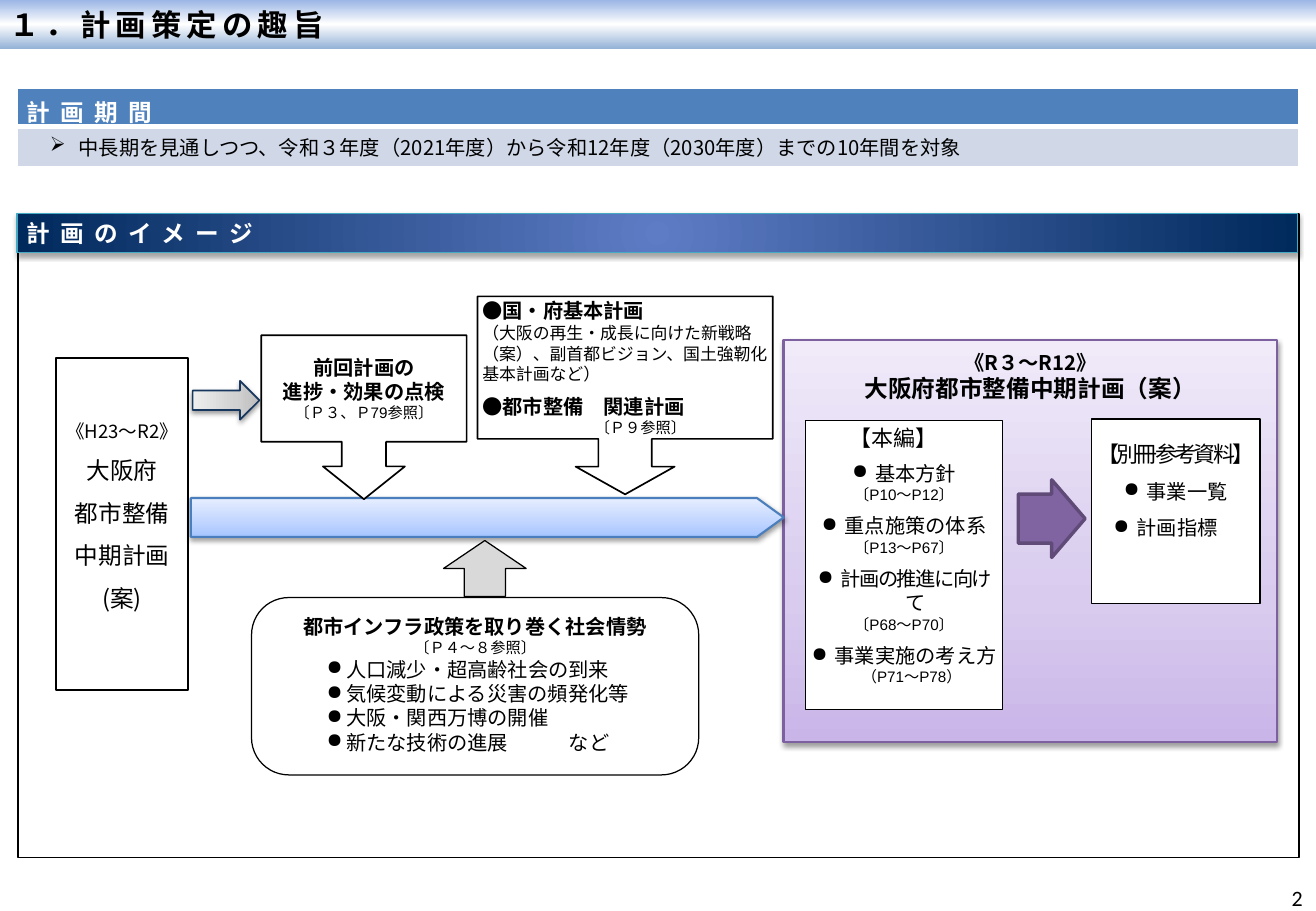
"""Builds the slide on the purpose and period of the urban development plan."""
from pptx import Presentation
from pptx.dml.color import RGBColor
from pptx.enum.shapes import MSO_SHAPE as SHAPE
from pptx.enum.text import MSO_ANCHOR as ANCHOR, PP_ALIGN as ALIGN
from pptx.oxml import parse_xml
from pptx.oxml.ns import nsdecls, qn
from pptx.util import Inches, Pt

GRID = Inches(0.1)
NOTO, ARIAL, CALIBRI = "Noto Sans CJK JP", "Arial", "Calibri"
BLACK, WHITE = RGBColor(0, 0, 0), RGBColor(255, 255, 255)
NAVY, BLUE, TEAL = RGBColor(0x17, 0x37, 0x5E), RGBColor(0x4B, 0x7E, 0xBC), RGBColor(0x46, 0xAA, 0xC5)
PURPLE, VIOLET, DARK_VIOLET = RGBColor(0x7D, 0x60, 0xA0), RGBColor(0x80, 0x64, 0xA2), RGBColor(0x5F, 0x4A, 0x78)
GREY, HEADER_BLUE, PALE_BLUE = RGBColor(0xD9, 0xD9, 0xD9), RGBColor(0x4F, 0x81, 0xBD), RGBColor(0xD0, 0xD8, 0xE8)
UPWARD, DOWNWARD = '<a:lin ang="16200000" scaled="0"/>', '<a:lin ang="5400000" scaled="0"/>'
RADIAL = '<a:path path="circle"><a:fillToRect l="50000" t="50000" r="50000" b="50000"/></a:path>'

deck = Presentation()
deck.slide_width, deck.slide_height = Inches(10.83), Inches(7.5)
slide = deck.slides.add_slide(deck.slide_layouts[6])


def draw(preset, at, fill=None, line=None, weight=1, adjust=(), turn=0, shadow=0):
    """Adds a shape at grid units; fill is a colour or (direction, stops)."""
    shape = slide.shapes.add_shape(preset, *(round(n * GRID) for n in at))
    shape.rotation = turn
    for index, value in enumerate(adjust):
        shape.adjustments[index] = value
    if fill is None:
        shape.fill.background()
    elif isinstance(fill, RGBColor):
        shape.fill.solid()
        shape.fill.fore_color.rgb = fill
    else:
        direction, stops = fill
        marks = "".join(f'<a:gs pos="{place * 1000}"><a:srgbClr val="{colour}"/></a:gs>' for place, colour in stops)
        shape.fill.gradient()
        plain = shape._element.spPr.find(qn("a:gradFill"))
        plain.getparent().replace(plain, parse_xml(
            f'<a:gradFill {nsdecls("a")} rotWithShape="1"><a:gsLst>{marks}</a:gsLst>{direction}</a:gradFill>'))
    if line is None:
        shape.line.fill.background()
    else:
        shape.line.color.rgb, shape.line.width = line, Pt(weight)
    shape.shadow.inherit = False
    if shadow:
        shape._element.spPr.find(qn("a:effectLst")).append(parse_xml(
            f'<a:outerShdw {nsdecls("a")} blurRad="{Pt(3.1)}" dist="{Pt(1.7)}" dir="5400000" rotWithShape="0">'
            f'<a:srgbClr val="000000"><a:alpha val="{shadow * 1000}"/></a:srgbClr></a:outerShdw>'))
    return shape


def write(frame, items, inset=(0.04, 0.04, 0.04, 0.04), anchor=ANCHOR.MIDDLE, align=ALIGN.CENTER, color=BLACK, leading=None):
    """Fills a text frame with (text or runs, size, options) items."""
    frame.word_wrap, frame.vertical_anchor = True, anchor
    frame.margin_left, frame.margin_top, frame.margin_right, frame.margin_bottom = map(Inches, inset)
    for index, (runs, size, extra) in enumerate(items):
        para = frame.add_paragraph() if index else frame.paragraphs[0]
        for text, changes in [(runs, {})] if isinstance(runs, str) else runs:
            run = para.add_run()
            run.text = text
            for key, value in changes.items():
                run._r.get_or_add_rPr().set(key, value)
        para.alignment = align if "align" not in extra else extra["align"]
        if leading:
            para.line_spacing = leading
        para.space_before, para.space_after = Pt(extra.get("before", 0)), Pt(extra.get("after", 0))
        font = para.font
        font.size, font.bold, font.name = Pt(size), extra.get("bold", False), extra.get("font", NOTO)
        font.color.rgb = color
        props = para._p.get_or_add_pPr()
        defaults = props.find(qn("a:defRPr"))
        defaults.set("spc", str(round(extra.get("spacing", 0) * 100)))
        defaults.find(qn("a:latin")).addnext(parse_xml(f'<a:ea {nsdecls("a")} typeface="{NOTO}"/>'))
        left, hang = extra.get("indent", (0, 0))
        props.set("marL", str(Inches(left)))
        props.set("indent", str(Inches(hang)))
        if "bullet" in extra:
            defaults.addprevious(parse_xml(f'<a:buChar {nsdecls("a")} char="{extra["bullet"]}"/>'))


BOLD, SMALL = dict(bold=True), dict(font=ARIAL)
POINT = dict(bullet="●", indent=(0.19, -0.19))
TREND = dict(bullet="●", indent=(0.59, -0.16), font=CALIBRI, align=ALIGN.LEFT)
BAND = dict(bold=True, spacing=6)
BAR_INSET = (0.08, 0.04, 0.08, 0.04)

title = draw(SHAPE.RECTANGLE, (0, 0, 108.3, 4), (DOWNWARD, [(0, "9AB5E4"), (50, "FFFFFF"), (100, "95B3D7")]))
write(title.text_frame, [("１．計画策定の趣旨", 18, dict(bold=True, spacing=3))], BAR_INSET, align=ALIGN.LEFT)
draw(SHAPE.RECTANGLE, (1.5, 17.6, 105.4, 53), line=BLACK)
page = slide.shapes.add_textbox(*(round(n * GRID) for n in (82.9, 71.9, 25.3, 4)))
write(page.text_frame, [("2", 13, dict(font=CALIBRI))], (0.1, 0.05, 0.1, 0.05), align=ALIGN.RIGHT)

new_plan = draw(SHAPE.RECTANGLE, (64.5, 28, 40.6, 33.1), (UPWARD, [(0, "C9B5E8"), (35, "D8CBEE"), (100, "F0EAF9")]),
                PURPLE, 1.5, shadow=38)
write(new_plan.text_frame, [("《R３～R12》", 12, BOLD), ("大阪府都市整備中期計画（案）", 14, BOLD)],
      (0.08, 0.08, 0.08, 0.08), ANCHOR.TOP)

old_plan = draw(SHAPE.RECTANGLE, (4.6, 29.5, 10.9, 27.3), WHITE, BLACK, 1.25)
old_lines = ["大阪府", "都市整備", "中期計画", "(案)"]
write(old_plan.text_frame, [("《H23～R2》", 11, {})] + [(text, 14, {}) for text in old_lines],
      (0.06, 0.01, 0.06, 0.24), leading=1.5)

draw(SHAPE.DOWN_ARROW, (17, 30.2, 3.2, 5.5), (UPWARD, [(0, "BDBDBD"), (35, "D1D1D1"), (100, "EEEEEE")]),
     NAVY, turn=270, shadow=38)
draw(SHAPE.PENTAGON, (15.7, 41, 48.8, 3.2), (UPWARD, [(0, "A4C4FF"), (35, "BFD4FF"), (100, "E6EEFF")]),
     BLUE, 1.25, [0.69], shadow=38)

main_part = draw(SHAPE.RECTANGLE, (66.3, 34.6, 16.2, 23.8), WHITE, BLACK, 0.75)
write(main_part.text_frame, [
    ("【本編】　", 13, {}),
    ("基本方針", 12, dict(POINT, before=6)),
    ("〔P10～P12〕", 9, SMALL),
    ("重点施策の体系", 12, dict(POINT, before=6)),
    ("〔P13～P67〕", 9, dict(SMALL, after=6)),
    ("計画の推進に向けて", 12, dict(POINT, spacing=-0.9)),
    ("〔P68～P70〕", 9, dict(SMALL, after=6)),
    ("事業実施の考え方", 12, POINT),
    ("　（P71～P78）", 9, SMALL),
], (0.04, 0.04, 0.04, 0.2))

appendix = draw(SHAPE.RECTANGLE, (89.8, 34.5, 13.9, 15.2), WHITE, BLACK, 0.75)
write(appendix.text_frame, [("【別冊参考資料】", 13, dict(spacing=-1.5)), ("事業一覧", 12, POINT), ("計画指標　", 12, POINT)],
      (0.04, 0.04, 0.04, 0.5), leading=1.5)
draw(SHAPE.RIGHT_ARROW, (83.8, 39.5, 5.5, 6.4), VIOLET, DARK_VIOLET, 2, [0.63, 0.5])

review = draw(SHAPE.DOWN_ARROW_CALLOUT, (21.5, 27.6, 16.9, 13.5), WHITE, BLACK, adjust=[0.27, 0.25, 0.2, 0.65])
write(review.text_frame, [("前回計画の", 12, BOLD), ("進捗・効果の点検", 12, BOLD), ("〔Ｐ３、Ｐ79参照〕", 9, SMALL)])

related = draw(SHAPE.DOWN_ARROW_CALLOUT, (39.3, 24.4, 24.3, 16.3), WHITE, BLACK, adjust=[0.27, 0.25, 0.14, 0.72])
write(related.text_frame, [
    ([("●", {"b": "0"}), ("国・府基本計画", {})], 12, BOLD),
    ("（大阪の再生・成長に向けた新戦略（案）、副首都ビジョン、国土強靭化基本計画など）", 10, dict(font=CALIBRI)),
    ([("●", {"b": "0"}), ("都市整備　関連計画", {})], 12, dict(BOLD, before=6)),
    ("〔Ｐ９参照〕", 9, dict(SMALL, align=ALIGN.CENTER, indent=(0.25, 0))),
], align=ALIGN.LEFT)

society = draw(SHAPE.ROUNDED_RECTANGLE, (20.7, 49.2, 36.8, 14.6), WHITE, BLACK, 0.75, [0.21])
trends = ["人口減少・超高齢社会の到来", "気候変動による災害の頻発化等", "大阪・関西万博の開催",
          [("新たな技術の進展", {}), ("　", {"spc": "2400"}), ("など", {})]]
write(society.text_frame, [("都市インフラ政策を取り巻く社会情勢", 12, BOLD), ("〔Ｐ４～８参照〕", 9, SMALL)]
      + [(trend, 12, TREND) for trend in trends], (0.1, 0.05, 0.1, 0.05), ANCHOR.TOP)
draw(SHAPE.RIGHT_ARROW, (37.6, 43.4, 4.6, 6.8), GREY, BLACK, 0.75, turn=270)

image_band = draw(SHAPE.RECTANGLE, (1.4, 17.6, 105.4, 3.2), (RADIAL, [(0, "5E7CC5"), (100, "00295C")]),
                  TEAL, 0.75, shadow=35)
write(image_band.text_frame, [("計画のイメージ", 14, BAND)], BAR_INSET, align=ALIGN.LEFT, color=WHITE)

period = slide.shapes.add_table(2, 1, *(round(n * GRID) for n in (1.4, 7.3, 105.5, 6.4)))
period.table.horz_banding = False
period_rows = [
    (0.23, HEADER_BLUE, WHITE, ANCHOR.MIDDLE, 3, ("計画期間", 14, BAND)),
    (0.33, PALE_BLUE, BLACK, ANCHOR.TOP, 1,
     (" 中長期を見通しつつ、令和３年度（2021年度）から令和12年度（2030年度）までの10年間を対象", 12,
      dict(bullet="➢", indent=(0.39, -0.2)))),
]
for row, (height, fill, color, anchor, rule, item) in enumerate(period_rows):
    period.table.rows[row].height = Inches(height)
    cell = period.table.cell(row, 0)
    cell.fill.solid()
    cell.fill.fore_color.rgb = fill
    write(cell.text_frame, [item], BAR_INSET, anchor, ALIGN.LEFT, color)
    cell.vertical_anchor = anchor
    cell.margin_left, cell.margin_top, cell.margin_right, cell.margin_bottom = map(Inches, BAR_INSET)
    for place, (side, weight) in enumerate([("L", 1), ("R", 1), ("T", 3 if row else 1), ("B", rule)]):
        cell._tc.get_or_add_tcPr().insert(place, parse_xml(
            f'<a:ln{side} {nsdecls("a")} w="{Pt(weight)}"><a:solidFill><a:srgbClr val="{WHITE}"/></a:solidFill></a:ln{side}>'))
period.height = round(6.4 * GRID)

deck.save("out.pptx")
